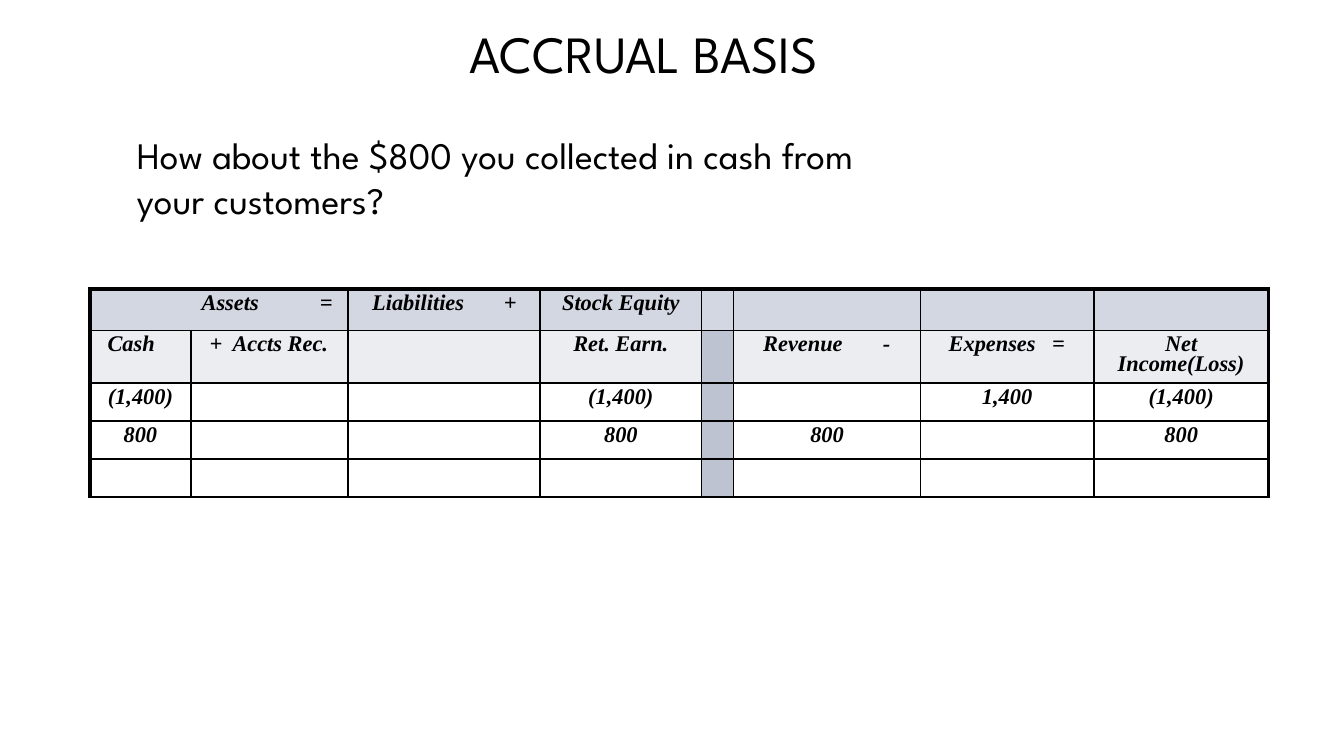
from lxml.etree import SubElement
from pptx import Presentation
from pptx.dml.color import RGBColor
from pptx.enum.text import MSO_ANCHOR as Anchor, PP_ALIGN as Align
from pptx.oxml.ns import qn
from pptx.util import Inches, Pt

COLORS = {"ink": "000000", "header": "D3D7E1", "subheader": "EBEDF1", "divider": "BEC3D2"}

# Widescreen page, 16:9
deck = Presentation()
deck.slide_width = Inches(10)
deck.slide_height = Inches(10) * 9 // 16
page = deck.slides.add_slide(deck.slide_layouts[6])


def add_span(para, text, font, size, bold=False):
    span = para.add_run()
    span.text = text
    span.font.name, span.font.size = font, Pt(size)
    span.font.bold = span.font.italic = bold
    span.font.color.rgb = RGBColor.from_string(COLORS["ink"])


def add_border(cell, side, width):
    line = SubElement(cell._tc.get_or_add_tcPr(), qn(f"a:{side}"), w=str(Pt(width)))
    fill = SubElement(line, qn("a:solidFill"))
    SubElement(fill, qn("a:srgbClr"), val=COLORS["ink"])


# Accounting table: a tab separates a label from its operator
widths = [0.75, 1.17, 1.43, 1.2, 0.23, 1.39, 1.29, 1.3]
heights = [0.31, 0.39, 0.27, 0.27, 0.27]
rows = [
    ["Assets\t=", "", "Liabilities\t+", "Stock Equity", "", "", "", ""],
    ["Cash", "+\tAccts Rec.", "", "Ret. Earn.", "", "Revenue\t-", "Expenses\t=", "Net Income(Loss)"],
    ["(1,400)", "", "", "(1,400)", "", "", "1,400", "(1,400)"],
    ["800", "", "", "800", "", "800", "", "800"],
    [""] * 8,
]
# Left-aligned cells: left margin and tab stop in inches
tabbed = {
    (0, 0): (0.83, 0.88), (0, 2): (0.18, 0.98), (1, 0): (0.13, None),
    (1, 1): (0.14, 0.17), (1, 5): (0.22, 0.89), (1, 6): (0.21, 0.77),
}
last_column = len(widths) - 1

frame = page.shapes.add_table(len(rows), len(widths), Inches(0.67), Inches(2.15),
                              Inches(sum(widths)), Inches(sum(heights)))
table = frame.table
table.first_row = table.horz_banding = False
for column, width in zip(table.columns, widths):
    column.width = Inches(width)
for row, height in zip(table.rows, heights):
    row.height = Inches(height)
table.cell(0, 0).merge(table.cell(0, 1))

for r, labels in enumerate(rows):
    for c, label in enumerate(labels):
        cell = table.cell(r, c)
        cell.margin_left = cell.margin_right = Inches(0.1)
        cell.margin_top = cell.margin_bottom = Inches(0.04)

        # Borders come before the fill in the cell properties
        add_border(cell, "lnL", 2.25 if c == 0 else 1)
        add_border(cell, "lnR", 2.25 if c == last_column else 1)
        add_border(cell, "lnT", 2.25 if r == 0 else 1)
        add_border(cell, "lnB", 1)
        shade = "header" if r == 0 else "divider" if c == 4 else "subheader" if r == 1 else None
        if shade:
            cell.fill.solid()
            cell.fill.fore_color.rgb = RGBColor.from_string(COLORS[shade])
        else:
            cell.fill.background()

        para = cell.text_frame.paragraphs[0]
        para.line_spacing = 0.8
        para.alignment = Align.CENTER
        if (r, c) in tabbed:
            margin, stop = tabbed[r, c]
            cell.margin_left = Inches(margin)
            para.alignment = Align.LEFT
            if stop:
                tabs = SubElement(para._p.get_or_add_pPr(), qn("a:tabLst"))
                SubElement(tabs, qn("a:tab"), pos=str(Inches(stop)), algn="l")
        if label:
            add_span(para, label, "Times New Roman", 12, bold=True)
        else:
            para.font.size = Pt(12)

# Title and question
for text, place, size, align, anchor in [
    ("ACCRUAL BASIS", (2.79, 0.11, 4, 0.57), 28, Align.CENTER, Anchor.TOP),
    ("How about the $800 you collected in cash from your customers?",
     (0.92, 0.98, 5.75, 0.67), 20, Align.LEFT, Anchor.MIDDLE),
]:
    box = page.shapes.add_textbox(*map(Inches, place))
    box.text_frame.word_wrap = True
    box.text_frame.vertical_anchor = anchor
    para = box.text_frame.paragraphs[0]
    para.alignment = align
    add_span(para, text, "League Spartan", size)

deck.save("out.pptx")
